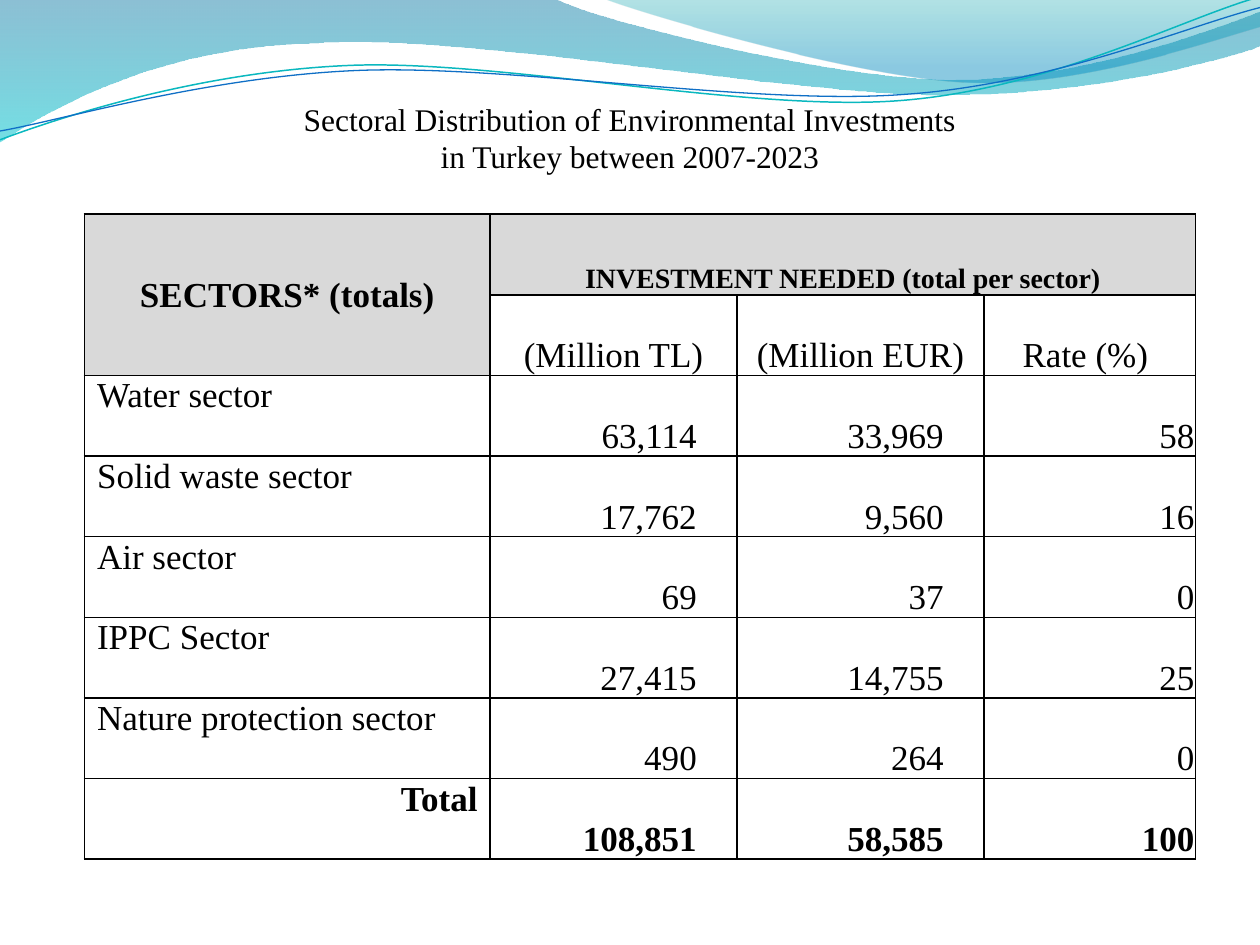
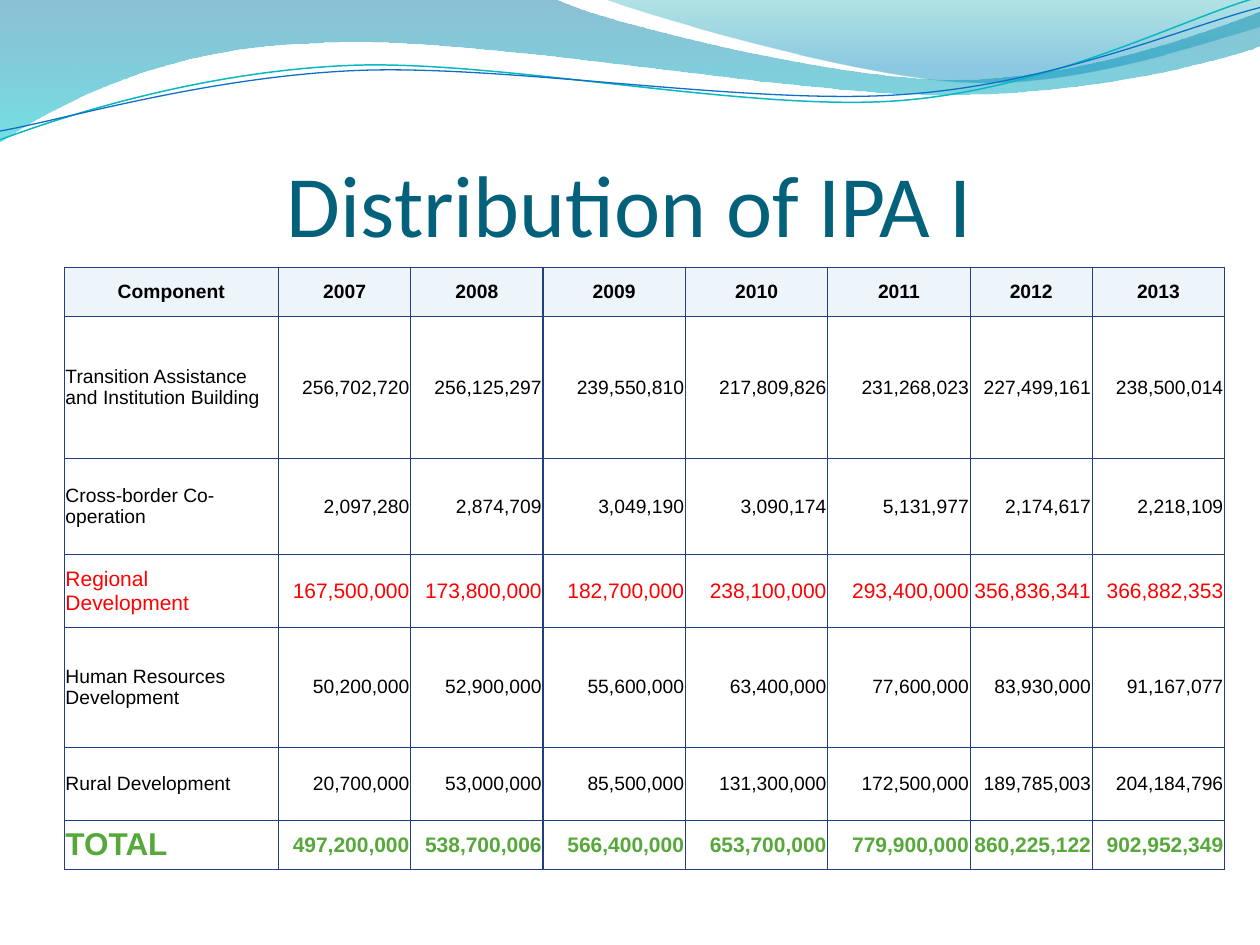
from lxml import etree
from pptx import Presentation
from pptx.dml.color import RGBColor
from pptx.enum.text import MSO_ANCHOR, PP_ALIGN
from pptx.oxml.ns import qn
from pptx.util import Inches, Pt

TOP, MID, LOW = MSO_ANCHOR.TOP, MSO_ANCHOR.MIDDLE, MSO_ANCHOR.BOTTOM
LEFT, CENTER, RIGHT = PP_ALIGN.LEFT, PP_ALIGN.CENTER, PP_ALIGN.RIGHT

HEX = {
    "black": "000000", "grey": "D9D9D9", "navy": "213F7D", "pale": "EDF4FA",
    "red": "FF0000", "green": "55A839", "title": "04617B",
    "deep": "0074A1", "aqua": "00C6CF", "teal": "00A1A9", "sky": "008BBF",
    "curl": "0AB8BF", "blue": "0F6FC6",
}
SERIF, SANS, HEAD = "Times New Roman", "Arial", "Calibri"

BAND = [[(0, 0)], [(4.4, -0.01)],
        [(4.76, 0.17), (6.64, 0.63), (7.58, 0.63)],
        [(8.53, 0.63), (9.58, 0.26), (10, 0.09)], [(10.01, 0.36)],
        [(9.83, 0.44), (8.7, 0.76), (7.46, 0.75)],
        [(6.22, 0.75), (3.82, 0.28), (2.57, 0.34)],
        [(1.29, 0.36), (0.46, 0.83), (-0.01, 1.13)], [(0, 0)]]
CREST = [[(4.79, -0.01)],
         [(5.09, 0.11), (6.82, 0.62), (7.69, 0.65)],
         [(8.56, 0.69), (9.61, 0.32), (10, 0.21)],
         [(10, 0)], [(4.79, -0.01)]]
UPPER = [[(0, 1.11)],
         [(0.48, 0.93), (1.58, 0.57), (2.77, 0.52)],
         [(3.95, 0.47), (5.93, 0.89), (7.13, 0.8)],
         [(8.33, 0.71), (9.38, 0.15), (9.98, -0.02)]]
LOWER = [[(0, 1.04)],
         [(0.47, 0.96), (1.64, 0.61), (2.83, 0.56)],
         [(4.03, 0.51), (5.97, 0.84), (7.17, 0.75)],
         [(8.36, 0.67), (9.41, 0.21), (10, 0.06)]]

SECTORS = [
    ("Water sector", "63,114", "33,969", "58"),
    ("Solid waste sector", "17,762", "9,560", "16"),
    ("Air sector", "69", "37", "0"),
    ("IPPC Sector", "27,415", "14,755", "25"),
    ("Nature protection sector", "490", "264", "0"),
    ("Total", "108,851", "58,585", "100"),
]
FUNDS = [
    ("Component", "2007", "2008", "2009", "2010", "2011", "2012", "2013"),
    ("Transition Assistance and Institution Building", "256,702,720",
     "256,125,297", "239,550,810", "217,809,826", "231,268,023",
     "227,499,161", "238,500,014"),
    ("Cross-border Co-operation", "2,097,280", "2,874,709", "3,049,190",
     "3,090,174", "5,131,977", "2,174,617", "2,218,109"),
    ("Regional Development", "167,500,000", "173,800,000", "182,700,000",
     "238,100,000", "293,400,000", "356,836,341", "366,882,353"),
    ("Human Resources Development", "50,200,000", "52,900,000", "55,600,000",
     "63,400,000", "77,600,000", "83,930,000", "91,167,077"),
    ("Rural Development", "20,700,000", "53,000,000", "85,500,000",
     "131,300,000", "172,500,000", "189,785,003", "204,184,796"),
    ("TOTAL", "497,200,000", "538,700,006", "566,400,000", "653,700,000",
     "779,900,000", "860,225,122", "902,952,349"),
]


def rgb(name):
    return RGBColor.from_string(HEX[name])


def bend(shape, parts):
    lines = list(shape._element.iter(qn("a:lnTo")))
    for line, part in zip(lines, parts):
        if len(part) == 1:
            continue
        curve = etree.Element(qn("a:cubicBezTo"))
        for x, y in part:
            etree.SubElement(curve, qn("a:pt"), x=str(Inches(x) - shape.left),
                             y=str(Inches(y) - shape.top))
        line.getparent().replace(line, curve)


def draw(slide, parts, close):
    knots = [tuple(map(Inches, part[-1])) for part in parts]
    pen = slide.shapes.build_freeform(*knots[0])
    pen.add_line_segments(knots[1:], close=close)
    shape = pen.convert_to_shape()
    shape.shadow.inherit = False
    bend(shape, parts[1:])
    return shape


def wave(slide, parts, stops):
    shape = draw(slide, parts, True)
    shape.line.fill.background()
    shape.fill.gradient()
    shape.fill.gradient_angle = 270
    for stop, (place, color, _) in zip(shape.fill.gradient_stops, stops):
        stop.position = place
        stop.color.rgb = rgb(color)
    tints = shape._element.iter(qn("a:srgbClr"))
    for tint, (_, _, alpha) in zip(tints, stops):
        etree.SubElement(tint, qn("a:alpha"), val=str(alpha * 1000))


def strand(slide, parts, color, width):
    shape = draw(slide, parts, False)
    shape.fill.background()
    shape.line.color.rgb = rgb(color)
    shape.line.width = Pt(width)


def header(slide):
    wave(slide, BAND, [(0, "deep", 45), (1, "aqua", 55)])
    wave(slide, CREST, [(0, "teal", 30), (0.8, "sky", 45)])
    strand(slide, UPPER, "curl", 0.85)
    strand(slide, LOWER, "blue", 0.75)


def write(para, text, size, font, color="black", bold=False):
    run = para.add_run()
    run.text = text
    run.font.size = Pt(size)
    run.font.name = font
    run.font.bold = bold
    run.font.color.rgb = rgb(color)


def title(slide, height, lines, *style):
    box = slide.shapes.add_textbox(Inches(0.5), Inches(0.77),
                                   Inches(9), Inches(height))
    frame = box.text_frame
    frame.word_wrap = True
    frame.vertical_anchor = LOW
    frame.margin_left = frame.margin_right = frame.margin_bottom = 0
    frame.margin_top = Inches(0.05)
    para = frame.paragraphs[0]
    para.alignment = CENTER
    for index, line in enumerate(lines):
        if index:
            para.add_line_break()
        write(para, line, *style)


def edge(cell, color, width):
    props = cell._tc.get_or_add_tcPr()
    for index, side in enumerate(("lnL", "lnR", "lnT", "lnB")):
        line = etree.Element(qn("a:" + side), w=str(Pt(width)))
        fill = etree.SubElement(line, qn("a:solidFill"))
        etree.SubElement(fill, qn("a:srgbClr"), val=HEX[color])
        props.insert(index, line)


def grid(slide, box, cols, rows, color, width):
    table = slide.shapes.add_table(len(rows), len(cols),
                                   *map(Inches, box)).table
    table.first_row = table.horz_banding = False
    for col, size in zip(table.columns, cols):
        col.width = Inches(size)
    for row, size in zip(table.rows, rows):
        row.height = Inches(size)
    for cell in table.iter_cells():
        cell.fill.background()
        edge(cell, color, width)
    return table


def put(cell, text, style, align, anchor, left=0.01, right=0.01, low=0.01,
        gap=0, fill=None):
    cell.margin_left, cell.margin_right = Inches(left), Inches(right)
    cell.margin_top, cell.margin_bottom = Inches(0.01), Inches(low)
    cell.vertical_anchor = anchor
    if fill:
        cell.fill.solid()
        cell.fill.fore_color.rgb = rgb(fill)
    para = cell.text_frame.paragraphs[0]
    para.alignment = align
    para.space_before = para.space_after = Pt(gap)
    write(para, text, *style)


def sectors(slide, box):
    table = grid(slide, box, [3.22, 1.96, 1.96, 1.68], [0.64] * 8, "black", 1)
    table.cell(0, 0).merge(table.cell(1, 0))
    table.cell(0, 1).merge(table.cell(0, 3))
    plain, strong = (20, SERIF), (20, SERIF, "black", True)
    base = {"low": 0, "gap": 2}
    put(table.cell(0, 0), "SECTORS* (totals)", strong, CENTER, MID,
        fill="grey", **base)
    put(table.cell(0, 1), "INVESTMENT NEEDED (total per sector)",
        (16, SERIF, "black", True), CENTER, LOW, fill="grey", **base)
    for c, unit in enumerate(("(Million TL)", "(Million EUR)", "Rate (%) "), 1):
        put(table.cell(1, c), unit, plain, CENTER, LOW, **base)
    for r, (name, *values) in enumerate(SECTORS, 2):
        total = name == "Total"
        style = strong if total else plain
        put(table.cell(r, 0), name, style, RIGHT if total else LEFT, TOP,
            left=0.1, right=0.1, **base)
        for c, value in enumerate(values, 1):
            put(table.cell(r, c), value, style, RIGHT, LOW,
                right=0.01 if c == 3 else 0.32, **base)


def funds(slide, box):
    table = grid(slide, box, [1.7, 1.05, 1.05, 1.13, 1.13, 1.13, 0.97, 1.05],
                 [0.39, 1.13, 0.76, 0.58, 0.95, 0.58, 0.39], "navy", 0.75)
    looks = {"Component": (11, SANS, "black", True),
             "Regional Development": (12, SANS, "red"),
             "TOTAL": (12, SANS, "green", True)}
    for r, row in enumerate(FUNDS):
        style = looks.get(row[0], (11, SANS))
        for c, text in enumerate(row):
            align = CENTER if r == 0 else RIGHT if c else LEFT
            look = (18, *style[1:]) if text == "TOTAL" else style
            put(table.cell(r, c), text, look, align, MID,
                fill=None if r else "pale")


def main():
    deck = Presentation()
    deck.slide_width, deck.slide_height = Inches(10), Inches(7.5)
    first, second = (deck.slides.add_slide(deck.slide_layouts[6])
                     for _ in range(2))
    header(first)
    title(first, 0.62, ["Sectoral Distribution of Environmental Investments",
                        "in Turkey between 2007-2023"], 18, SERIF)
    sectors(first, (0.67, 1.7, 8.82, 5.12))
    header(second)
    title(second, 1.25, ["Distribution of IPA I"], 50, HEAD, "title")
    funds(second, (0.51, 2.12, 9.21, 4.78))
    deck.save("out.pptx")


if __name__ == "__main__":
    main()
